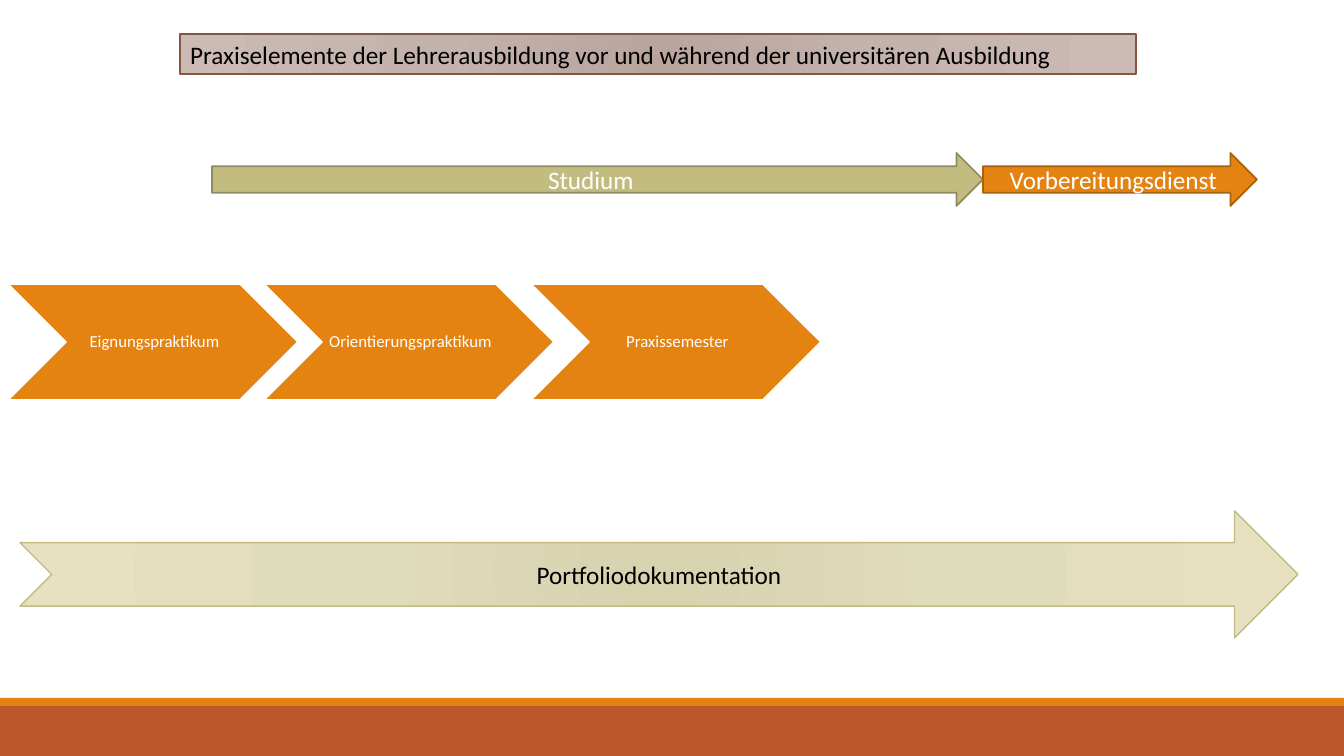
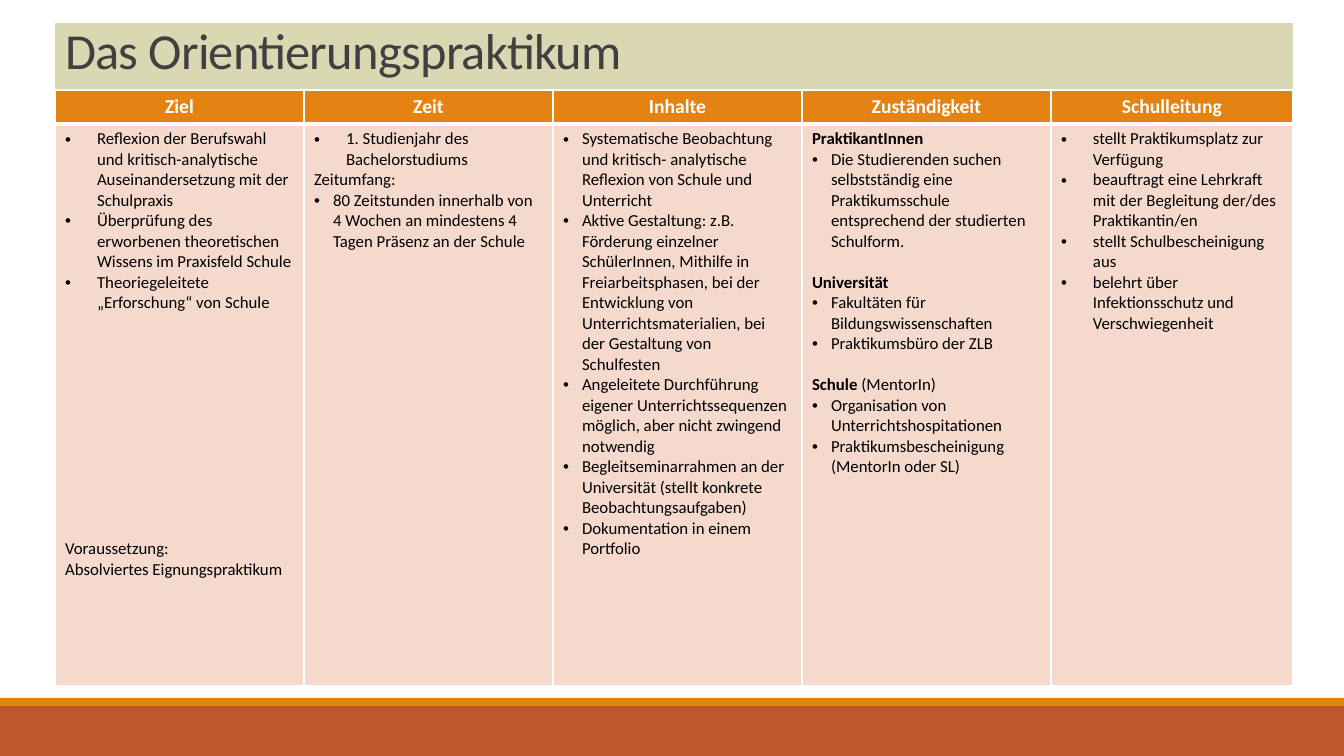
import pptx
import pptx.util
import pptx.dml.color
import pptx.enum.shapes
import pptx.enum.text
import pptx.oxml
import pptx.oxml.ns
import lxml.etree

RGB = pptx.dml.color.RGBColor
Pt = pptx.util.Pt
MSO = pptx.enum.shapes.MSO_SHAPE
ALIGN = pptx.enum.text.PP_ALIGN
ANCHOR = pptx.enum.text.MSO_ANCHOR
qn = pptx.oxml.ns.qn

SCALE = 914400 / 100.8
FONT = "Calibri"

WHITE = RGB(0xFF, 0xFF, 0xFF)
BLACK = RGB(0x00, 0x00, 0x00)
GREY = RGB(0x40, 0x40, 0x40)
ORANGE = RGB(0xE4, 0x83, 0x12)
DARK_ORANGE = RGB(0xA9, 0x61, 0x0D)
RUST = RGB(0xBD, 0x58, 0x2C)
OLIVE = RGB(0xC2, 0xBC, 0x80)
DARK_OLIVE = RGB(0x90, 0x8B, 0x5F)
PALE_OLIVE = RGB(0xDA, 0xD7, 0xB3)
BROWN = RGB(0x86, 0x56, 0x40)
PEACH = RGB(0xF5, 0xD9, 0xCC)
OLIVE_GLOW = [RGB(0xD7, 0xD3, 0xAF), RGB(0xDF, 0xDB, 0xBD), RGB(0xE5, 0xE1, 0xC1)]
BROWN_GLOW = [RGB(0xB9, 0xA4, 0x9E), RGB(0xC4, 0xB2, 0xAD), RGB(0xCC, 0xBA, 0xB5)]

WIDE, NARROW, LINE = 32, 19, 14.65


def px(n):
    return pptx.util.Emu(round(n * SCALE))


def place(sp, box):
    sp.left, sp.top, sp.width, sp.height = map(px, box)


def add_run(p, text, size, color, bold=False):
    r = p.add_run()
    r.text = text
    r.font.name = FONT
    r.font.size = Pt(size)
    r.font.bold = bold
    r.font.color.rgb = color
    return r


def paint(sp, fill, line=None, width=1.25):
    if isinstance(fill, RGB):
        sp.fill.solid()
        sp.fill.fore_color.rgb = fill
    else:
        sp.fill.gradient()
        grad = sp._element.spPr.find(qn("a:gradFill"))
        for child in list(grad):
            grad.remove(child)
        stops = lxml.etree.SubElement(grad, qn("a:gsLst"))
        for pos, color in zip((0, 45000, 100000), fill):
            stop = lxml.etree.SubElement(stops, qn("a:gs"), pos=str(pos))
            lxml.etree.SubElement(stop, qn("a:srgbClr"), val=str(color))
        path = lxml.etree.SubElement(grad, qn("a:path"), path="circle")
        lxml.etree.SubElement(path, qn("a:fillToRect"), **dict.fromkeys("ltrb", "100000"))
    if line is None:
        sp.line.fill.background()
    else:
        sp.line.color.rgb = line
        sp.line.width = Pt(width)


def add_block(s, kind, box, fill, line=None, width=1.25):
    sp = s.shapes.add_shape(kind, *map(px, box))
    sp.shadow.inherit = False
    paint(sp, fill, line, width)
    return sp


def label(sp, text, size, color):
    tf = sp.text_frame
    tf.word_wrap = True
    tf.vertical_anchor = ANCHOR.MIDDLE
    p = tf.paragraphs[0]
    p.alignment = ALIGN.CENTER
    add_run(p, text, size, color)
    return tf


def add_footer_bands(prs, s):
    tree = prs.slide_master.shapes._spTree
    for top, height, color in ((706, 50, RUST), (698, 8, ORANGE)):
        band = add_block(s, MSO.RECTANGLE, (0, top, 1344, height), color)
        tree.append(band._element)


def set_title(s, box, text, size, color):
    sp = s.shapes.title
    place(sp, box)
    tf = sp.text_frame
    tf.auto_size = pptx.enum.text.MSO_AUTO_SIZE.NONE
    tf.word_wrap = True
    tf.vertical_anchor = ANCHOR.TOP
    p = tf.paragraphs[0]
    p.alignment = ALIGN.LEFT
    return sp, p, add_run(p, text, size, color)


def add_phases(s, box):
    x, y, w, h = box
    study = 771
    phases = (
        ("Studium", 0, study, OLIVE, DARK_OLIVE),
        ("Vorbereitungsdienst", study, w - study, ORANGE, DARK_ORANGE),
    )
    for text, dx, width, fill, line in phases:
        sp = add_block(s, MSO.RIGHT_ARROW, (x + dx, y, width, h), fill, line)
        label(sp, text, 18, WHITE)


def add_internships(s, box):
    x, y, w, h = box
    steps = ((0, "Eignungspraktikum"), (256, "Orientierungspraktikum"), (523, "Praxissemester"))
    for dx, text in steps:
        sp = add_block(s, MSO.CHEVRON, (x + dx, y, w - steps[-1][0], h), ORANGE, WHITE)
        tf = label(sp, text, 12, WHITE)
        tf.margin_left = px(5)
        tf.margin_top = tf.margin_right = tf.margin_bottom = px(2)
        tf.paragraphs[0].line_spacing = 0.9


def add_portfolio(s, box):
    sp = add_block(s, MSO.NOTCHED_RIGHT_ARROW, box, OLIVE_GLOW, OLIVE, 1)
    label(sp, "Portfoliodokumentation", 18, BLACK)


def bullets(indent, *texts):
    return [(indent, 0, [(text, False)]) for text in texts]


def plain(text, before=0):
    return [(0, before, [(text, False)])]


def heading(text, before=0, rest=None):
    runs = [(text, True)]
    if rest:
        runs.append((rest, False))
    return [(0, before, runs)]


COLUMNS = (
    ("Ziel", 249, bullets(
        WIDE,
        "Reflexion der Berufswahl und kritisch-analytische Auseinandersetzung mit der Schulpraxis",
        "Überprüfung des erworbenen theoretischen Wissens im Praxisfeld Schule",
        "Theoriegeleitete „Erforschung“ von Schule",
    ) + plain("Voraussetzung:", 11 * LINE) + plain("Absolviertes Eignungspraktikum")),
    ("Zeit", 249, bullets(
        WIDE, "1. Studienjahr des Bachelorstudiums",
    ) + plain("Zeitumfang:") + bullets(
        NARROW,
        "80 Zeitstunden innerhalb von 4 Wochen an mindestens 4 Tagen Präsenz an der Schule",
    )),
    ("Inhalte", 249, bullets(
        NARROW,
        "Systematische Beobachtung und kritisch- analytische Reflexion von Schule und Unterricht",
        "Aktive Gestaltung: z.B. Förderung einzelner SchülerInnen, Mithilfe in "
        "Freiarbeitsphasen, bei der Entwicklung von Unterrichtsmaterialien, "
        "bei der Gestaltung von Schulfesten",
        "Angeleitete Durchführung eigener Unterrichtssequenzen möglich, "
        "aber nicht zwingend notwendig",
        "Begleitseminarrahmen an der Universität (stellt konkrete Beobachtungsaufgaben)",
        "Dokumentation in einem Portfolio",
    )),
    ("Zuständigkeit", 249, heading("PraktikantInnen") + bullets(
        NARROW,
        "Die Studierenden suchen selbstständig eine Praktikumsschule "
        "entsprechend der studierten Schulform.",
    ) + heading("Universität", LINE) + bullets(
        NARROW, "Fakultäten für Bildungswissenschaften", "Praktikumsbüro der ZLB",
    ) + heading("Schule ", LINE, "(MentorIn)") + bullets(
        NARROW,
        "Organisation von Unterrichtshospitationen",
        "Praktikumsbescheinigung (MentorIn oder SL)",
    )),
    ("Schulleitung", 242, bullets(
        WIDE,
        "stellt Praktikumsplatz zur Verfügung",
        "beauftragt eine Lehrkraft mit der Begleitung der/des Praktikantin/en",
        "stellt Schulbescheinigung aus",
        "belehrt über Infektionsschutz und Verschwiegenheit",
    )),
)


def style_cell(cell, fill, bottom):
    cell.fill.solid()
    cell.fill.fore_color.rgb = fill
    tcPr = cell._tc.get_or_add_tcPr()
    for i, (side, width) in enumerate((("L", 1), ("R", 1), ("T", 1), ("B", bottom))):
        ln = pptx.oxml.parse_xml(
            f'<a:ln{side} {pptx.oxml.ns.nsdecls("a")} w="{Pt(width)}">'
            f'<a:solidFill><a:srgbClr val="{WHITE}"/></a:solidFill></a:ln{side}>'
        )
        tcPr.insert(i, ln)


def set_bullet(p, indent):
    pPr = p._p.get_or_add_pPr()
    pPr.set("marL", str(px(indent)))
    pPr.set("indent", str(-px(indent)))
    lxml.etree.SubElement(pPr, qn("a:buFont"), typeface="Arial")
    lxml.etree.SubElement(pPr, qn("a:buChar"), char="•")


def fill_body(cell, items):
    tf = cell.text_frame
    for i, (indent, before, runs) in enumerate(items):
        p = tf.add_paragraph() if i else tf.paragraphs[0]
        p.space_before = Pt(before)
        if indent:
            set_bullet(p, indent)
        for text, bold in runs:
            add_run(p, text, 12, BLACK, bold)


def add_overview(s, box):
    head_height = 34
    table = s.shapes.add_table(2, len(COLUMNS), *map(px, box)).table
    table.first_row = table.horz_banding = False
    table.rows[0].height = px(head_height)
    table.rows[1].height = px(box[3] - head_height)
    for i, (title, width, items) in enumerate(COLUMNS):
        table.columns[i].width = px(width)
        head, body = table.cell(0, i), table.cell(1, i)
        style_cell(head, ORANGE, 3)
        style_cell(body, PEACH, 1)
        head.vertical_anchor = ANCHOR.MIDDLE
        p = head.text_frame.paragraphs[0]
        p.alignment = ALIGN.CENTER
        add_run(p, title, 14, WHITE, True)
        fill_body(body, items)


def build_timeline(s):
    text = "Praxiselemente der Lehrerausbildung vor und während der universitären Ausbildung"
    sp, p, r = set_title(s, (180, 34, 956, 40), text, 18, BLACK)
    paint(sp, BROWN_GLOW, BROWN, 1)
    add_phases(s, (212, 153, 1045, 53))
    add_internships(s, (8, 284, 813, 116))
    add_portfolio(s, (20, 511, 1278, 127))


def build_overview(s):
    sp, p, r = set_title(s, (55, 23, 1238, 66), "Das Orientierungspraktikum", 36, GREY)
    paint(sp, PALE_OLIVE)
    p.line_spacing = 0.85
    r.font._element.set("spc", "-50")
    add_overview(s, (55, 90, 1238, 596))


def main():
    prs = pptx.Presentation()
    prs.slide_width, prs.slide_height = px(1344), px(756)
    builders = (build_timeline, build_overview)
    slides = [prs.slides.add_slide(prs.slide_layouts[5]) for _ in builders]
    add_footer_bands(prs, slides[0])
    for build, s in zip(builders, slides):
        build(s)
    prs.save("out.pptx")


if __name__ == "__main__":
    main()
